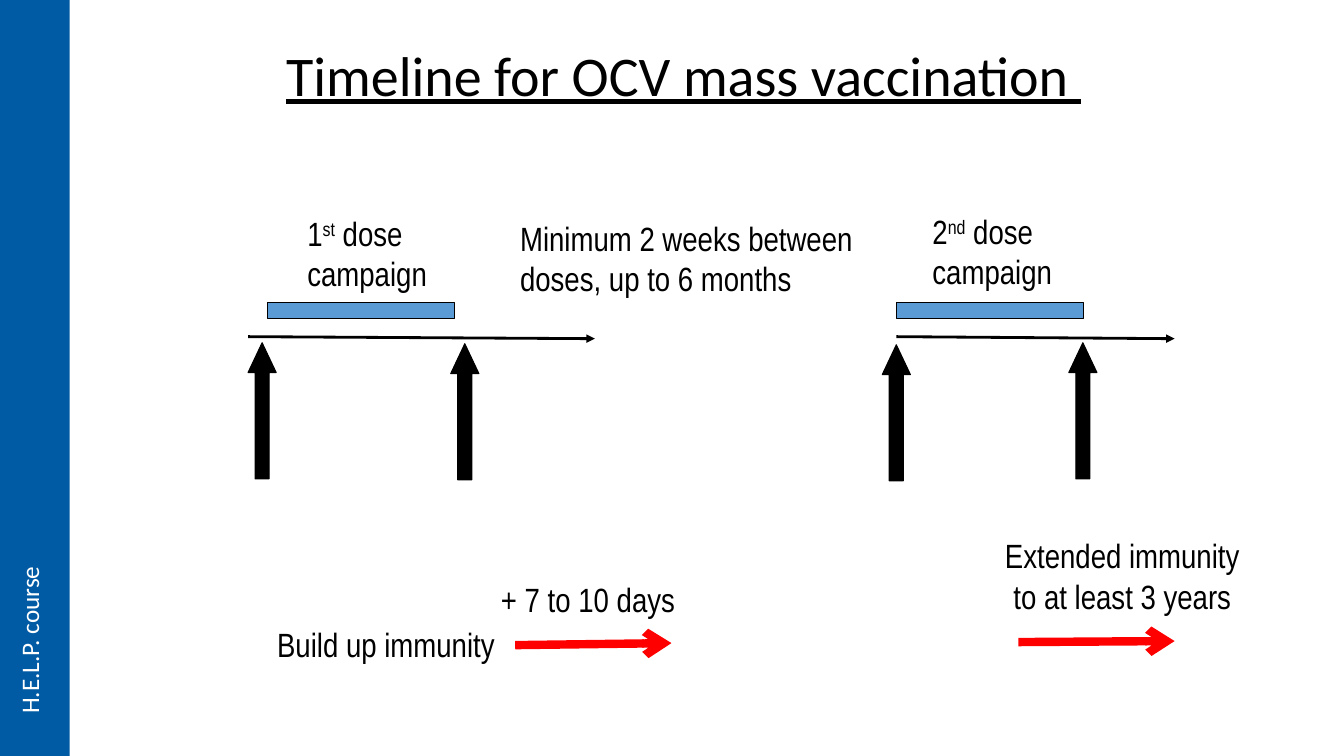
import pptx
import pptx.dml.color
import pptx.enum.shapes
import pptx.enum.text
import pptx.oxml.ns
import pptx.util
from lxml import etree

Inches, Pt = pptx.util.Inches, pptx.util.Pt
SHAPE = pptx.enum.shapes.MSO_SHAPE
ALIGN = pptx.enum.text.PP_ALIGN
BLACK, WHITE, RED, BAR_BLUE, BAND_BLUE = "000000", "FFFFFF", "FF0000", "5B9BD5", "005BA4"


def rgb(value):
    return pptx.dml.color.RGBColor.from_string(value)


def add_child(parent, tag, **attrs):
    return etree.SubElement(parent, pptx.oxml.ns.qn(tag), **attrs)


class SlideBuilder:
    def __init__(self, slide):
        self.shapes = slide.shapes
        self.font, self.size = "Arial Narrow", 24

    def shape(self, kind, x, y, w, h, fill, line=None):
        sp = self.shapes.add_shape(kind, Inches(x), Inches(y), Inches(w), Inches(h))
        sp.shadow.inherit = False
        sp.fill.solid()
        sp.fill.fore_color.rgb = rgb(fill)
        if line:
            sp.line.color.rgb = rgb(line)
            sp.line.width = Pt(0.75)
        else:
            sp.line.fill.background()
        return sp

    def arrow(self, x1, y1, x2, y2, color, width, head):
        cxn = self.shapes.add_connector(
            pptx.enum.shapes.MSO_CONNECTOR.STRAIGHT,
            Inches(x1), Inches(y1), Inches(x2), Inches(y2))
        cxn.line.color.rgb = rgb(color)
        cxn.line.width = Pt(width)
        add_child(cxn.line._get_or_add_ln(), "a:tailEnd", type=head)
        add_child(cxn._element.spPr, "a:effectLst")

    def text(self, lines, x, y, w, h, font=None, size=None, color=BLACK, underline=None,
             align=ALIGN.LEFT, wrap=False, vert=None):
        """Each line is a string, or a list of (text, is_superscript) pairs."""
        sp = self.shapes.add_textbox(Inches(x), Inches(y), Inches(w), Inches(h))
        tf = sp.text_frame
        tf.word_wrap = wrap
        tf.auto_size = pptx.enum.text.MSO_AUTO_SIZE.SHAPE_TO_FIT_TEXT
        if vert:
            tf._txBody.bodyPr.set("vert", vert)
        for i, line in enumerate(lines):
            p = tf.add_paragraph() if i else tf.paragraphs[0]
            p.alignment = align
            for words, superscript in [(line, False)] if isinstance(line, str) else line:
                r = p.add_run()
                r.text = words
                r.font.name = font or self.font
                r.font.size = Pt(size or self.size)
                r.font.color.rgb = rgb(color)
                r.font.underline = underline
                if superscript:
                    r.font._element.set("baseline", "30000")

    def campaign(self, number, suffix, label, bar_x, axis, up_arrows):
        """Dose label, duration bar, time axis and the arrows marking start and end."""
        self.arrow(axis[0], 3.34, axis[1], 3.36, BLACK, 2, "triangle")
        for x, y in up_arrows:
            sp = self.shape(SHAPE.UP_ARROW, x, y, 0.28, 1.35, BLACK, BLACK)
            sp.adjustments[0], sp.adjustments[1] = 0.5, 1.06
        self.shape(SHAPE.RECTANGLE, bar_x, 3, 1.86, 0.16, BAR_BLUE, BLACK)
        dose = [(number, False), (suffix, True), (" dose", False)]
        self.text([dose, "campaign"], *label, 1.4, 0.91)


def main():
    prs = pptx.Presentation()
    prs.slide_width, prs.slide_height = Inches(13.33), Inches(7.5)
    s = SlideBuilder(prs.slides.add_slide(prs.slide_layouts[6]))

    s.shape(SHAPE.RECTANGLE, 0, 0, 0.69, 7.5, BAND_BLUE)
    s.text(["H.E.L.P. course"], 0.09, 5.55, 0.5, 1.63, font="Calibri", size=18,
           color=WHITE, vert="vert270")
    s.text(["Timeline for OCV mass vaccination "], 2.74, 0.35, 10.05, 0.77,
           font="Calibri", size=40, underline=True, wrap=True)

    s.campaign("1", "st", (2.95, 2.06), 2.65, (2.46, 5.9), [(2.46, 3.4), (4.47, 3.41)])
    s.campaign("2", "nd", (9.15, 2.04), 8.89, (8.89, 11.65), [(8.75, 3.42), (10.6, 3.4)])
    s.text(["Minimum 2 weeks between", "doses, up to 6 months"], 5.06, 2.11, 3.54, 0.91)

    s.text(["+ 7 to 10 days"], 4.87, 5.69, 1.95, 0.5)
    s.text(["Build up immunity"], 2.65, 6.14, 2.39, 0.5)
    s.arrow(5.11, 6.4, 6.66, 6.38, RED, 6, "arrow")
    s.text(["Extended immunity", "to at least 3 years"], 9.85, 5.26, 2.56, 0.91,
           align=ALIGN.CENTER)
    s.arrow(10.1, 6.37, 11.65, 6.36, RED, 6, "arrow")

    prs.save("out.pptx")


if __name__ == "__main__":
    main()
